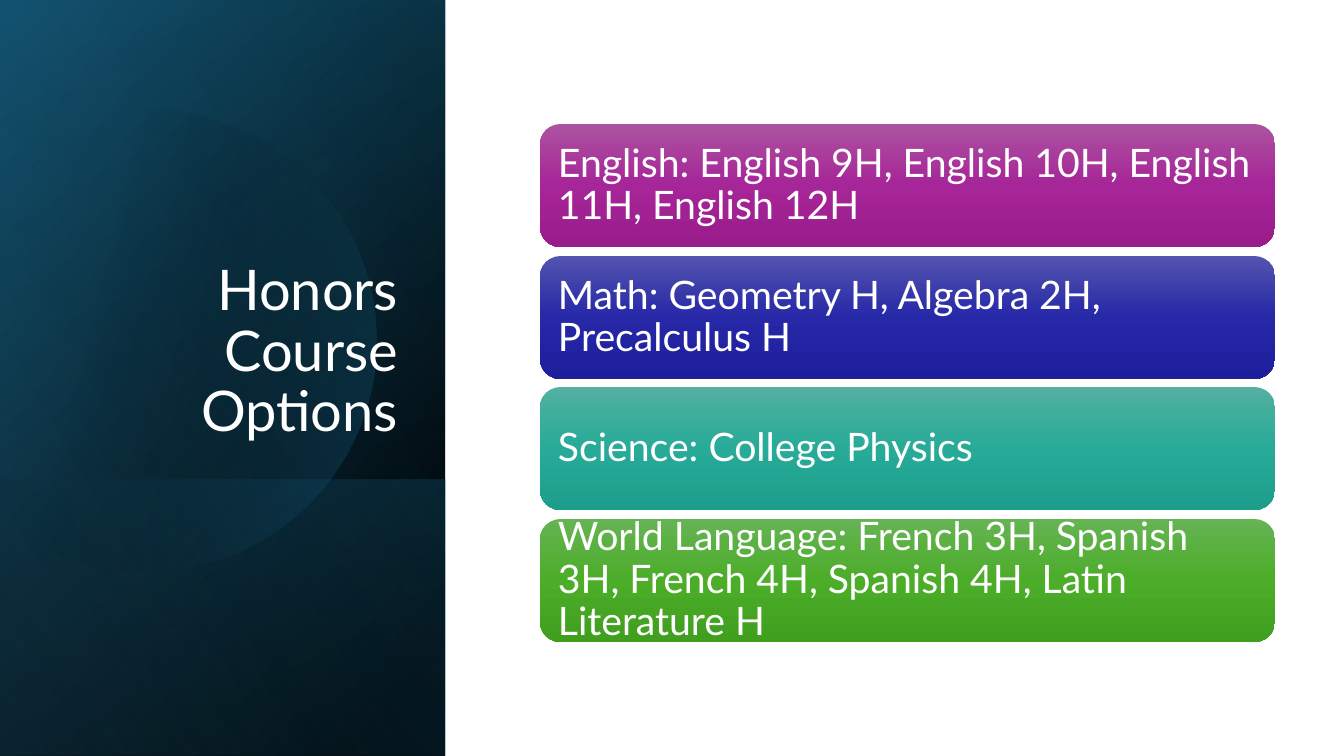
from math import acos, cos, sin

from pptx import Presentation
from pptx.dml.color import RGBColor
from pptx.enum.shapes import MSO_SHAPE
from pptx.enum.text import MSO_ANCHOR, PP_ALIGN
from pptx.oxml import parse_xml
from pptx.oxml.ns import nsdecls, qn
from pptx.util import Emu, Pt

PANEL_W, SLIDE_W, SLIDE_H = 445, 1344, 756
COURSES = [
    ("English: English 9H, English 10H, English 11H, English 12H",
     ["AC53A0", "A62598", "991C8B"]),
    ("Math: Geometry H, Algebra 2H, Precalculus H",
     ["5354AE", "2628A8", "1D1E9B"]),
    ("Science: College Physics",
     ["53B0A1", "27AB98", "1D9D8B"]),
    ("World Language: French 3H, Spanish 3H, French 4H, Spanish 4H, Latin Literature H",
     ["66B354", "4BAD28", "409F1E"]),
]


def px(n):
    return Emu(round(n * 914400 / 100.8))


def rgb(value):
    return RGBColor.from_string(value)


class Deck:
    """Draws styled elements on the current slide."""

    font = "Lato"
    ink = "FFFFFF"

    def __init__(self):
        self.prs = Presentation()
        self.prs.slide_width, self.prs.slide_height = px(SLIDE_W), px(SLIDE_H)
        self.s = self.prs.slides.add_slide(self.prs.slide_layouts[6])

    def paint(self, sp, stops, angle):
        sp.shadow.inherit = False
        sp.line.fill.background()
        sp.fill.background()
        gs = "".join(
            f'<a:gs pos="{pos * 1000}"><a:srgbClr val="{rgb(color)}">'
            f'<a:alpha val="{alpha * 1000}"/></a:srgbClr></a:gs>'
            for pos, color, alpha in stops)
        grad = parse_xml(
            f'<a:gradFill {nsdecls("a")} rotWithShape="1"><a:gsLst>{gs}</a:gsLst>'
            f'<a:lin ang="{angle * 60000}" scaled="0"/></a:gradFill>')
        pr = sp.element.spPr
        pr.replace(pr.find(qn("a:noFill")), grad)

    def box(self, x, y, w, h, stops, angle, kind=MSO_SHAPE.RECTANGLE):
        sp = self.s.shapes.add_shape(kind, px(x), px(y), px(w), px(h))
        self.paint(sp, stops, angle)
        return sp

    def cut_circle(self, cx, cy, radius, stops, angle):
        reach = acos(-cx / radius)
        arc = [reach * (i / 60 - 1) for i in range(121)]
        points = [(px(cx + radius * cos(t)), px(cy + radius * sin(t))) for t in arc]
        fb = self.s.shapes.build_freeform(*points[0])
        fb.add_line_segments(points[1:], close=True)
        self.paint(fb.convert_to_shape(), stops, angle)

    def set_text(self, sp, text, size, align, anchor):
        tf = sp.text_frame
        tf.text = text
        tf.word_wrap = True
        tf.vertical_anchor = anchor
        p = tf.paragraphs[0]
        p.alignment, p.line_spacing = align, 0.9
        font = p.runs[0].font
        font.name, font.size = self.font, Pt(size)
        font.color.rgb = rgb(self.ink)
        return tf

    def title(self, x, y, w, h, text):
        sp = self.s.shapes.add_textbox(px(x), px(y), px(w), px(h))
        self.set_text(sp, text, 40, PP_ALIGN.RIGHT, MSO_ANCHOR.BOTTOM)

    def card(self, x, y, w, h, text, colors):
        stops = [(i * 50, color, 100) for i, color in enumerate(colors)]
        sp = self.box(x, y, w, h, stops, 90, MSO_SHAPE.ROUNDED_RECTANGLE)
        tf = self.set_text(sp, text, 28, PP_ALIGN.LEFT, MSO_ANCHOR.MIDDLE)
        tf.margin_left = tf.margin_right = px(12)
        tf.margin_top = tf.margin_bottom = px(12)


def main():
    deck = Deck()
    deck.box(0, 0, PANEL_W, SLIDE_H, [(8, "000000", 100), (100, "104862", 100)], 220)
    deck.box(0, 0, PANEL_W, SLIDE_H, [(0, "000000", 0), (99, "156082", 46)], 240)
    deck.box(0, 480, PANEL_W, 276, [(2, "156082", 29), (100, "000000", 30)], 140)
    deck.cut_circle(145, 341, 231, [(29, "000000", 0), (100, "156082", 43)], 14)
    deck.box(0, 0, PANEL_W, SLIDE_H, [(0, "000000", 0), (99, "46B1E1", 11)], 150)
    deck.title(65, 185, 343, 264, "Honors Course Options")
    for i, (text, colors) in enumerate(COURSES):
        deck.card(540, 124 + round(i * 395 / 3), 735, 123, text, colors)
    deck.prs.save("out.pptx")


if __name__ == "__main__":
    main()
